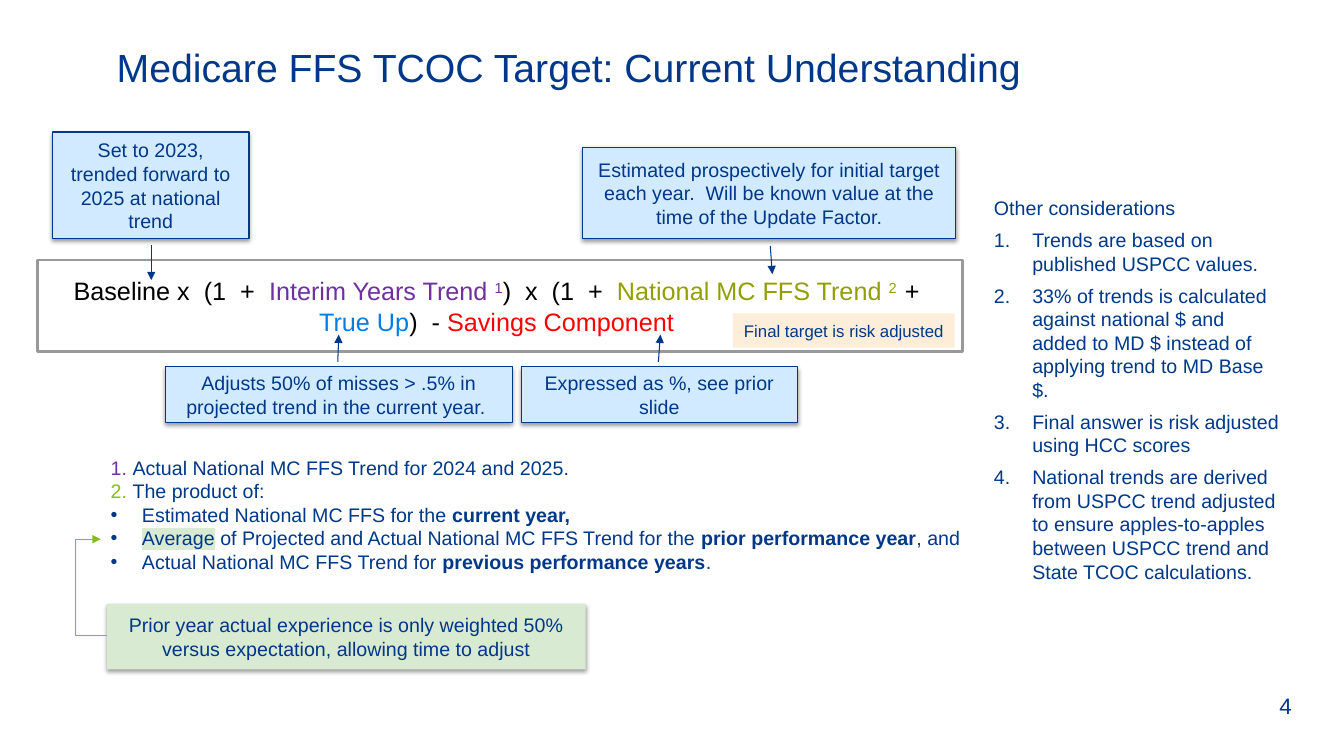
from lxml.etree import SubElement
from pptx import Presentation
from pptx.dml.color import RGBColor
from pptx.enum.shapes import MSO_CONNECTOR as CONN, MSO_SHAPE as SHAPE
from pptx.enum.text import MSO_ANCHOR as ANCHOR, PP_ALIGN as ALIGN
from pptx.oxml import parse_xml
from pptx.oxml.ns import nsdecls, qn
from pptx.util import Inches, Pt

NAVY = RGBColor(0x00, 0x38, 0x89)
BLACK = RGBColor(0x00, 0x00, 0x00)
PURPLE = RGBColor(0x70, 0x30, 0xA0)
OLIVE = RGBColor(0x91, 0xA0, 0x00)
BLUE = RGBColor(0x00, 0x7E, 0xE8)
RED = RGBColor(0xFF, 0x00, 0x00)
LIME = RGBColor(0x85, 0xBF, 0x16)
GREEN = RGBColor(0x83, 0xBF, 0x11)
GREY = RGBColor(0x99, 0x99, 0x99)
SKY = RGBColor(0xD1, 0xEA, 0xFF)
CREAM = RGBColor(0xFE, 0xED, 0xD8)
MINT = RGBColor(0xD9, 0xEA, 0xD3)

FONT = "Arial"
CELL = Inches(0.1)
COLS, ROWS = 133.3, 75
BOLD = {"bold": True}

TITLE = "Medicare FFS TCOC Target: Current Understanding"
FORMULA = [
    ("Baseline x  (1  +  ", {"color": BLACK}),
    ("Interim Years Trend ", {"color": PURPLE}),
    ("1", {"color": PURPLE, "raised": True}),
    (")  x  (1  +  ", {"color": BLACK}),
    ("National MC FFS Trend ", {"color": OLIVE}),
    ("2  ", {"color": OLIVE, "raised": True}),
    ("+  ", {"color": BLACK}),
    ("True Up", {"color": BLUE}),
    (")  - ", {"color": BLACK}),
    ("Savings Component ", {"color": RED}),
]
CALLOUTS = [
    ("Set to 2023, trended forward to 2025 at national trend",
     (5.2, 13.1, 19.5, 10.6), (15, 24.3, 15, 27.8)),
    ("Estimated prospectively for initial target each year.  Will be known "
     "value at the time of the Update Factor.",
     (57.8, 14.6, 37, 9.1), (76.4, 24.4, 76.6, 27.2)),
    ("Expressed as %, see prior slide",
     (51.7, 36.4, 27.4, 5.5), (65.3, 35.9, 65.5, 33.2)),
    ("Adjusts 50% of misses > .5% in projected trend in the current year. ",
     (16.4, 36.4, 34.4, 5.5), (33.5, 35.9, 33.6, 33.2)),
]
CONSIDERATIONS = [
    "Trends are based on published USPCC values.",
    "33% of trends is calculated against national $ and added to MD $ "
    "instead of applying trend to MD Base $.",
    "Final answer is risk adjusted using HCC scores",
    "National trends are derived from USPCC trend adjusted to ensure "
    "apples-to-apples between USPCC trend and State TCOC calculations.",
]
FOOTNOTES = [
    [("1. ", {"color": PURPLE}),
     ("Actual National MC FFS Trend for 2024 and 2025.", {})],
    [("2. ", {"color": LIME}), ("The product of:", {})],
]
PRODUCT = [
    [("Estimated National MC FFS for the ", {}), ("current year,", BOLD)],
    [("Average", {"marked": MINT}),
     (" of Projected and Actual National MC FFS Trend for the ", {}),
     ("prior performance year", BOLD), (", and", {})],
    [("Actual National MC FFS Trend for ", {}),
     ("previous performance years", BOLD), (".", {})],
]
RISK_NOTE = "Final target is risk adjusted"
WEIGHT_NOTE = ("Prior year actual experience is only weighted 50% versus "
               "expectation, allowing time to adjust")
ELBOW = (10.6, 63.1, 10, 53.5)
ELBOW_COL = 7.5


def cells(*counts):
    return [int(n * CELL) for n in counts]


def write(p, runs, size, align=ALIGN.LEFT):
    p.alignment = align
    for text, look in runs:
        r = p.add_run()
        r.text = text
        r.font.color.rgb = look.get("color", NAVY)
        for name, value in {"size": Pt(size), "name": FONT,
                            "bold": look.get("bold", False)}.items():
            setattr(r.font, name, value)
        rPr = r.font._element
        if look.get("raised"):
            rPr.set("baseline", "30000")
        if "marked" in look:
            mark = parse_xml(f'<a:highlight {nsdecls("a")}><a:srgbClr '
                             f'val="{look["marked"]}"/></a:highlight>')
            rPr.find(qn("a:solidFill")).addnext(mark)


def add_bullet(p, indent, tag, **attrs):
    pPr = p._p.get_or_add_pPr()
    pPr.set("marL", str(Inches(indent)))
    pPr.set("indent", str(-Inches(indent)))
    SubElement(SubElement(pPr, qn("a:buClr")), qn("a:srgbClr"), val=str(NAVY))
    SubElement(pPr, qn("a:buFont"), typeface=FONT)
    SubElement(pPr, qn(tag), **attrs)


def add_text(slide, place, paragraphs, size, anchor=ANCHOR.TOP):
    tf = slide.shapes.add_textbox(*cells(*place)).text_frame
    tf.word_wrap, tf.vertical_anchor = True, anchor
    for i, runs in enumerate(paragraphs):
        p = tf.add_paragraph() if i else tf.paragraphs[0]
        write(p, runs, size)
    return tf


def add_box(slide, place, runs, size, fill=None, line=None, width=0.75, raised=False):
    s = slide.shapes.add_shape(SHAPE.RECTANGLE, *cells(*place))
    s.shadow.inherit = False
    if fill is None:
        s.fill.background()
    else:
        s.fill.solid()
        s.fill.fore_color.rgb = fill
    if line is None:
        s.line.fill.background()
    else:
        s.line.color.rgb, s.line.width = line, Pt(width)
    if raised:
        s._element.spPr.find(qn("a:effectLst")).append(parse_xml(
            f'<a:outerShdw {nsdecls("a")} blurRad="{Pt(3.1)}" dist="{Pt(1.6)}" '
            'dir="5400000" rotWithShape="0"><a:srgbClr val="000000">'
            '<a:alpha val="38000"/></a:srgbClr></a:outerShdw>'))
    tf = s.text_frame
    tf.word_wrap, tf.vertical_anchor = True, ANCHOR.MIDDLE
    write(tf.paragraphs[0], runs, size, ALIGN.CENTER)


def add_arrow(slide, ends, color, kind=CONN.STRAIGHT):
    s = slide.shapes.add_connector(kind, *cells(*ends))
    s.line.color.rgb, s.line.width = color, Pt(0.75)
    SubElement(s.line._ln, qn("a:tailEnd"), type="triangle")
    SubElement(s._element.spPr, qn("a:effectLst"))
    return s


def main():
    """Build the Medicare target slide."""
    prs = Presentation()
    prs.slide_width, prs.slide_height = cells(COLS, ROWS)
    slide = prs.slides.add_slide(prs.slide_layouts[6])

    add_text(slide, (125.9, 68, 6.3, 4), [[("4", {})]], 16, ANCHOR.MIDDLE)
    add_text(slide, (10.6, 3.8, 115, 6.6), [[(TITLE, {})]], 28)
    add_box(slide, (3.7, 25.8, 91.8, 9.1), FORMULA, 18, line=GREY, width=2)
    for text, place, arrow in CALLOUTS:
        add_box(slide, place, [(text, {})], 14, SKY, NAVY, raised=True)
        add_arrow(slide, arrow, NAVY)
    add_box(slide, (72.7, 31.1, 22, 3.4), [(RISK_NOTE, {})], 12, CREAM)

    sidebar = ["Other considerations"] + CONSIDERATIONS
    tf = add_text(slide, (97.6, 14.2, 30.5, 48.9),
                  [[(text, {})] for text in sidebar], 14, ANCHOR.MIDDLE)
    for i, p in enumerate(tf.paragraphs):
        p.space_after = Pt(6)
        if i:
            add_bullet(p, 0.38, "a:buAutoNum", type="arabicPeriod")

    tf = add_text(slide, (10, 44.7, 86.7, 17.5), FOOTNOTES + PRODUCT, 14)
    for p in tf.paragraphs[len(FOOTNOTES):]:
        add_bullet(p, 0.31, "a:buChar", char="•")

    add_box(slide, (10.6, 59.9, 47.5, 6.5), [(WEIGHT_NOTE, {})], 14, MINT, raised=True)
    s = add_arrow(slide, ELBOW, GREEN, CONN.ELBOW)
    bend = (ELBOW[0] - ELBOW_COL) / (ELBOW[0] - ELBOW[2])
    SubElement(s._element.spPr.prstGeom.get_or_add_avLst(), qn("a:gd"),
               name="adj1", fmla=f"val {round(bend * 100000)}")
    prs.save("out.pptx")


if __name__ == "__main__":
    main()
